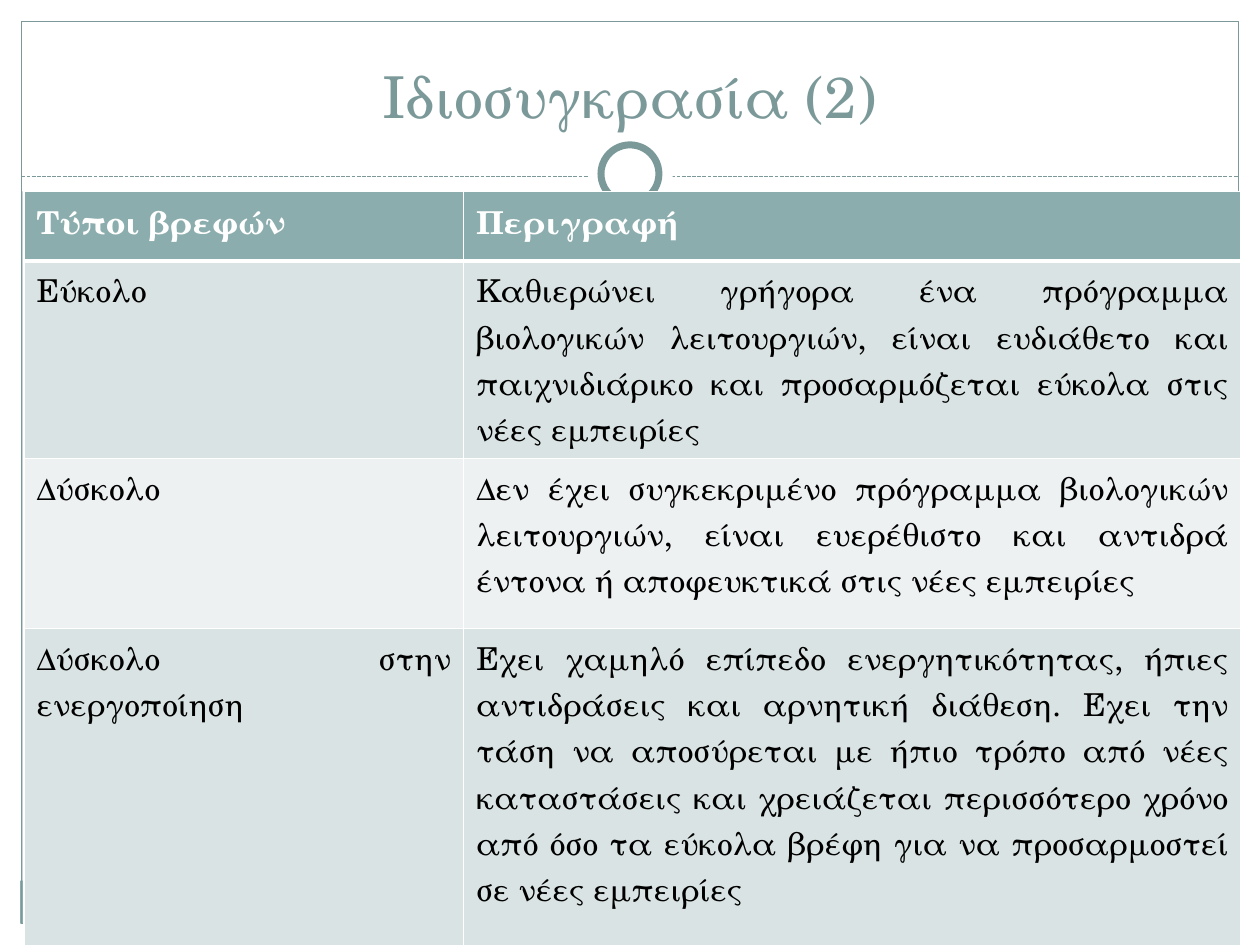
from lxml import etree
from pptx import Presentation
from pptx.dml.color import RGBColor
from pptx.enum.dml import MSO_LINE
from pptx.enum.shapes import MSO_CONNECTOR, MSO_SHAPE
from pptx.enum.text import MSO_ANCHOR, MSO_AUTO_SIZE, PP_ALIGN
from pptx.oxml.ns import qn
from pptx.util import Inches, Pt

RECT, OVAL = MSO_SHAPE.RECTANGLE, MSO_SHAPE.OVAL
FONT = "TeX Gyre Schola"
WHITE, BLACK, TEAL, DARK_TEAL = "FFFFFF", "000000", "8CADAE", "7C999A"
ROW_FILLS = ["DAE3E3", "EEF1F2"]

# Content
TITLE = "Ιδιοσυγκρασία (2)"
ROWS = [
    ("Τύποι βρεφών", "Περιγραφή"),
    ("Εύκολο",
     "Καθιερώνει γρήγορα ένα πρόγραμμα βιολογικών λειτουργιών, είναι ευδιάθετο "
     "και παιχνιδιάρικο και προσαρμόζεται εύκολα στις νέες εμπειρίες"),
    ("Δύσκολο",
     "Δεν έχει συγκεκριμένο πρόγραμμα βιολογικών λειτουργιών, είναι ευερέθιστο "
     "και αντιδρά έντονα ή αποφευκτικά στις νέες εμπειρίες"),
    ("Δύσκολο στην ενεργοποίηση",
     "Έχει χαμηλό επίπεδο ενεργητικότητας, ήπιες αντιδράσεις και αρνητική διάθεση. "
     "Έχει την τάση να αποσύρεται με ήπιο τρόπο από νέες καταστάσεις και χρειάζεται "
     "περισσότερο χρόνο από όσο τα εύκολα βρέφη για να προσαρμοστεί σε νέες εμπειρίες"),
]
COLUMN_WIDTHS = [3.49, 6.17]
ROW_HEIGHTS = [0.55, 1.35, 1.35, 2.56]

# Slide decoration, back to front: preset, box, fill, line width
EDGE = 0.17
BACK_SHAPES = [
    (RECT, (0, 7.5 - EDGE, 10, EDGE), WHITE, None),
    (RECT, (0, 0, 10, 1.52), WHITE, None),
    (RECT, (0, 0, EDGE, 7.5), WHITE, None),
    (RECT, (10 - EDGE, 0, EDGE, 7.5), WHITE, None),
    (RECT, (0.16, 6.99, 9.66, 0.34), TEAL, None),
    (RECT, (EDGE, EDGE, 10 - 2 * EDGE, 7.5 - 2 * EDGE), None, 0.75),
]
RING_SHAPES = [
    (OVAL, (4.67, 1.05, 0.67, 0.67), WHITE, None),
    (OVAL, (4.77, 1.15, 0.46, 0.46), WHITE, 4),
]


def rgb(value):
    return RGBColor.from_string(value)


def inches(box):
    return [Inches(length) for length in box]


def set_font(paragraph, size, color, bold=False):
    font = paragraph.font
    font.name, font.size, font.bold = FONT, Pt(size), bold
    font.color.rgb = rgb(color)


def add_shapes(slide, specs):
    for preset, box, fill, line_width in specs:
        shape = slide.shapes.add_shape(preset, *inches(box))
        shape.shadow.inherit = False
        if fill:
            shape.fill.solid()
            shape.fill.fore_color.rgb = rgb(fill)
        else:
            shape.fill.background()
        if line_width:
            shape.line.color.rgb = rgb(DARK_TEAL)
            shape.line.width = Pt(line_width)
        else:
            shape.line.fill.background()


def add_divider(slide):
    divider = slide.shapes.add_connector(
        MSO_CONNECTOR.STRAIGHT, *inches((EDGE, 1.4, 10 - EDGE, 1.4)))
    divider.line.color.rgb = rgb(DARK_TEAL)
    divider.line.width = Pt(0.75)
    divider.line.dash_style = MSO_LINE.SQUARE_DOT
    etree.SubElement(divider.element.spPr, qn("a:effectLst"))


def format_title(slide):
    title = slide.shapes.title
    title.left, title.top, title.width, title.height = inches((0.33, 0.25, 9.33, 0.83))
    frame = title.text_frame
    frame.text = TITLE
    frame.auto_size = MSO_AUTO_SIZE.NONE
    frame.vertical_anchor = MSO_ANCHOR.BOTTOM
    frame.paragraphs[0].alignment = PP_ALIGN.CENTER
    set_font(frame.paragraphs[0], 33, DARK_TEAL)
    # Bring the title in front of the white bands
    title.element.getparent().append(title.element)


def set_borders(cell, widths):
    properties = cell._tc.get_or_add_tcPr()
    for side, width in widths.items():
        border = etree.SubElement(properties, qn(f"a:ln{side}"), w=str(Pt(width)))
        fill = etree.SubElement(border, qn("a:solidFill"))
        etree.SubElement(fill, qn("a:srgbClr"), val=WHITE)


def add_types_table(slide):
    box = (0.19, 1.52, sum(COLUMN_WIDTHS), sum(ROW_HEIGHTS))
    table = slide.shapes.add_table(len(ROWS), len(COLUMN_WIDTHS), *inches(box)).table
    for column, width in zip(table.columns, COLUMN_WIDTHS):
        column.width = Inches(width)
    for r, texts in enumerate(ROWS):
        table.rows[r].height = Inches(ROW_HEIGHTS[r])
        header = r == 0
        for c, text in enumerate(texts):
            cell = table.cell(r, c)
            set_borders(cell, {"L": 1, "R": 1, "T": 3 if r == 1 else 1,
                               "B": 3 if header else 1})
            cell.fill.solid()
            cell.fill.fore_color.rgb = rgb(TEAL if header else ROW_FILLS[(r - 1) % 2])
            cell.text = text
            paragraph = cell.text_frame.paragraphs[0]
            paragraph.alignment = PP_ALIGN.JUSTIFY
            set_font(paragraph, 18, WHITE if header else BLACK, header)


def main():
    prs = Presentation()
    prs.slide_width, prs.slide_height = Inches(10), Inches(7.5)
    slide = prs.slides.add_slide(prs.slide_layouts[5])
    slide.background.fill.solid()
    slide.background.fill.fore_color.rgb = rgb("C5D1D7")
    add_shapes(slide, BACK_SHAPES)
    add_divider(slide)
    add_shapes(slide, RING_SHAPES)
    format_title(slide)
    add_types_table(slide)
    prs.save("out.pptx")


if __name__ == "__main__":
    main()
